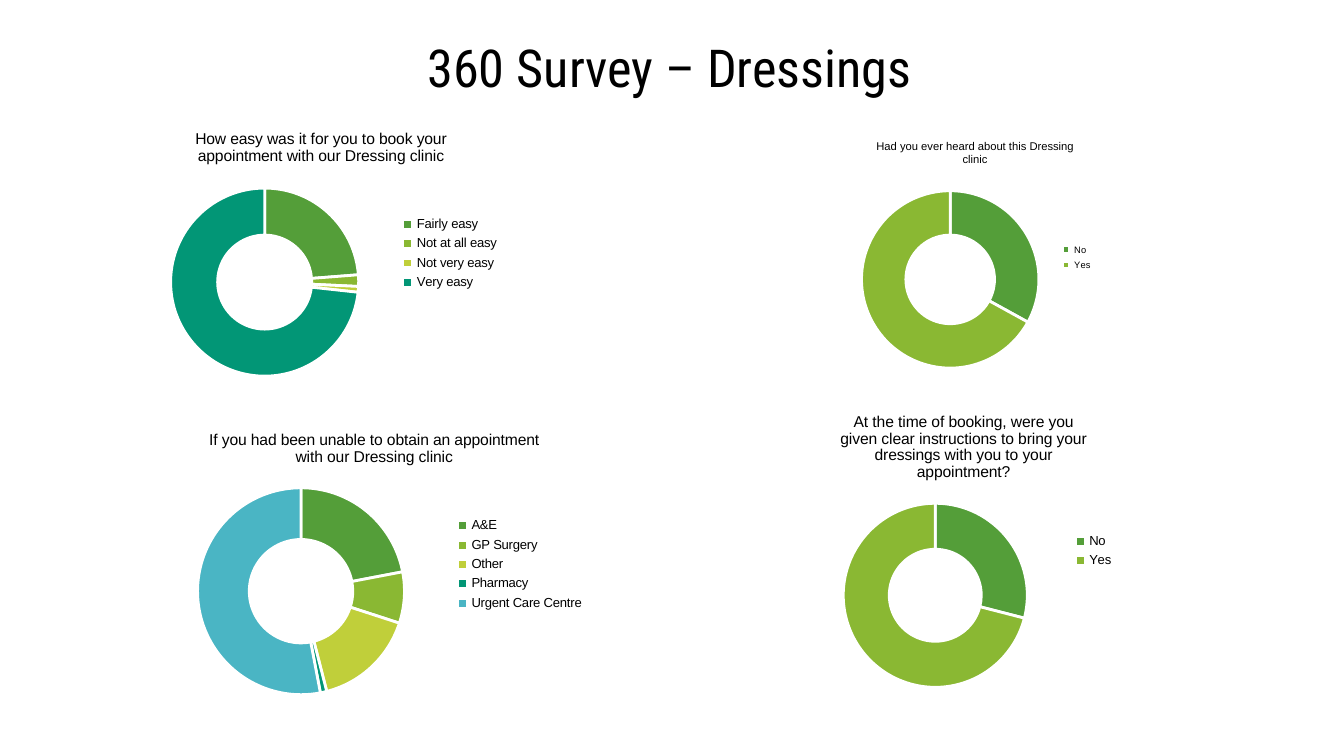
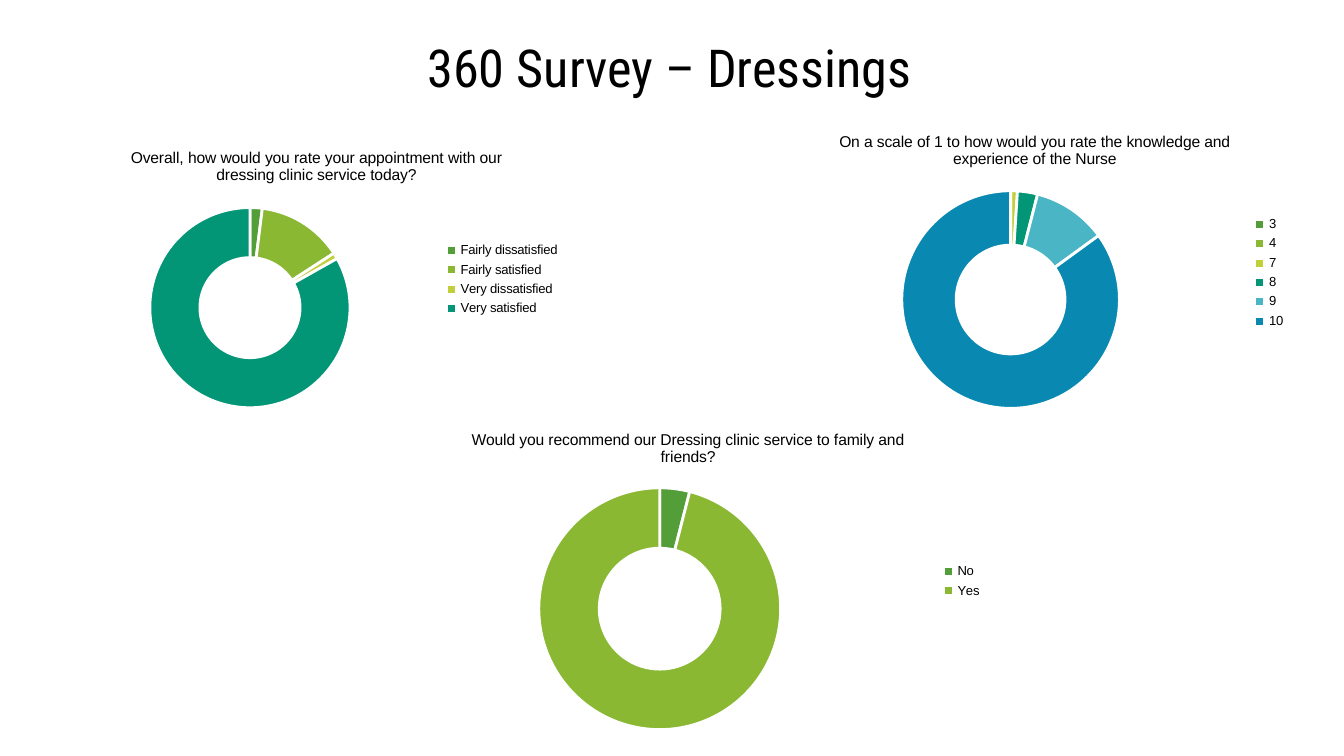
from lxml.etree import SubElement
from pptx import Presentation
from pptx.chart.data import CategoryChartData as ChartData
from pptx.dml.color import RGBColor as Rgb
from pptx.enum.chart import XL_CHART_TYPE as Kind, XL_LEGEND_POSITION as Side
from pptx.enum.text import MSO_ANCHOR as Anchor, PP_ALIGN as Align
from pptx.oxml.ns import qn
from pptx.util import Inches, Pt

COLORS = {
    "text": "000000",
    "edge": "FFFFFF",
    "green": "549E39",
    "lime": "8AB833",
    "yellow": "C0CF3A",
    "teal": "029676",
    "sky": "4AB5C4",
    "blue": "0989B1",
}
SLICES = ["green", "lime", "yellow", "teal", "sky", "blue"]
HEAD_FONT = "Roboto Condensed"
BODY_FONT = "Arial"


def tint(name):
    return Rgb.from_string(COLORS[name])


def style(font, name, size):
    font.name = name
    font.size = Pt(size)
    font.bold = False
    font.color.rgb = tint("text")


def add_title(slide, text):
    box = slide.shapes.add_textbox(Inches(0.32), Inches(0.18), Inches(9.32), Inches(0.63))
    frame = box.text_frame
    frame.word_wrap = True
    frame.vertical_anchor = Anchor.MIDDLE
    frame.margin_left = frame.margin_right = Inches(0.1)
    frame.margin_top = frame.margin_bottom = Inches(0.1)
    para = frame.paragraphs[0]
    para.alignment = Align.CENTER
    run = para.add_run()
    run.text = text
    style(run.font, HEAD_FONT, 28)


def place_ring(chart, box, ring):
    """Fix the ring (centre x and y on the slide, width) inside the chart's box."""
    left, top, width, height = box
    mid_x, mid_y, size = ring
    area = chart.plots[0]._element.getparent()
    for old in area.findall(qn("c:layout")):
        area.remove(old)
    layout = SubElement(area, qn("c:layout"))
    area.insert(0, layout)
    manual = SubElement(layout, qn("c:manualLayout"))
    parts = {
        "layoutTarget": "inner",
        "xMode": "edge",
        "yMode": "edge",
        "x": (mid_x - size / 2 - left) / width,
        "y": (mid_y - size / 2 - top) / height,
        "w": size / width,
        "h": size / height,
    }
    for tag, val in parts.items():
        text = val if isinstance(val, str) else f"{val:.4f}"
        SubElement(manual, qn(f"c:{tag}")).set("val", text)


def add_ring(slide, ask, box, ring, votes, size=7):
    data = ChartData()
    data.categories = list(votes)
    data.add_series("Series 1", list(votes.values()))
    spot = [Inches(n) for n in box]
    chart = slide.shapes.add_chart(Kind.DOUGHNUT, *spot, data).chart
    style(chart.font, BODY_FONT, size)

    chart.has_title = True
    run = chart.chart_title.text_frame.paragraphs[0].add_run()
    run.text = ask
    style(run.font, BODY_FONT, size * 1.2)
    chart.chart_title.include_in_layout = False

    chart.has_legend = True
    chart.legend.position = Side.RIGHT
    chart.legend.include_in_layout = False
    style(chart.legend.font, BODY_FONT, size)

    plot = chart.plots[0]
    plot.vary_by_categories = True
    plot._element.find(qn("c:holeSize")).set("val", "75")
    for i, name in enumerate(SLICES[:len(votes)]):
        form = plot.series[0].points[i].format
        form.fill.solid()
        form.fill.fore_color.rgb = tint(name)
        form.line.color.rgb = tint("edge")
        form.line.width = Pt(1.5)
    place_ring(chart, box, ring)


def add_page(deck):
    slide = deck.slides.add_slide(deck.slide_layouts[6])
    add_title(slide, "360 Survey – Dressings")
    return slide


def add_access(deck):
    slide = add_page(deck)
    add_ring(slide, "How easy was it for you to book your appointment with our Dressing clinic",
             (0.96, 0.84, 2.86, 2.09), (1.97, 2.1, 1.4),
             {"Fairly easy": 24, "Not at all easy": 2, "Not very easy": 1, "Very easy": 74})
    add_ring(slide, "Had you ever heard about this Dressing clinic",
             (6.27, 0.93, 1.97, 1.97), (7.07, 2.08, 1.32), {"No": 33, "Yes": 67}, size=5)
    add_ring(slide, "If you had been unable to obtain an appointment with our Dressing clinic",
             (1.12, 3.08, 3.33, 2.24), (2.24, 4.4, 1.54),
             {"A&E": 22, "GP Surgery": 8, "Other": 16, "Pharmacy": 1, "Urgent Care Centre": 53})
    add_ring(slide, "At the time of booking, were you given clear instructions "
             "to bring your dressings with you to your appointment?",
             (5.95, 2.94, 2.44, 2.32), (6.96, 4.43, 1.37), {"No": 29, "Yes": 71})


def add_rating(deck):
    slide = add_page(deck)
    add_ring(slide, "Overall, how would you rate your appointment "
             "with our dressing clinic service today?",
             (0.44, 0.98, 3.83, 2.2), (1.86, 2.29, 1.49),
             {"Fairly dissatisfied": 2, "Fairly satisfied": 14,
              "Very dissatisfied": 1, "Very satisfied": 84})
    add_ring(slide, "On a scale of 1 to how would you rate the knowledge "
             "and experience of the Nurse",
             (5.73, 0.86, 3.94, 2.34), (7.52, 2.23, 1.62),
             {"3": 0, "4": 0, "7": 1, "8": 3, "9": 11, "10": 85})
    add_ring(slide, "Would you recommend our Dressing clinic service to family and friends?",
             (2.83, 3.07, 4.58, 2.51), (4.91, 4.53, 1.8), {"No": 4, "Yes": 96})


def main():
    deck = Presentation()
    deck.slide_width = Inches(10)
    deck.slide_height = deck.slide_width * 9 // 16
    add_access(deck)
    add_rating(deck)
    deck.save("out.pptx")


if __name__ == "__main__":
    main()
